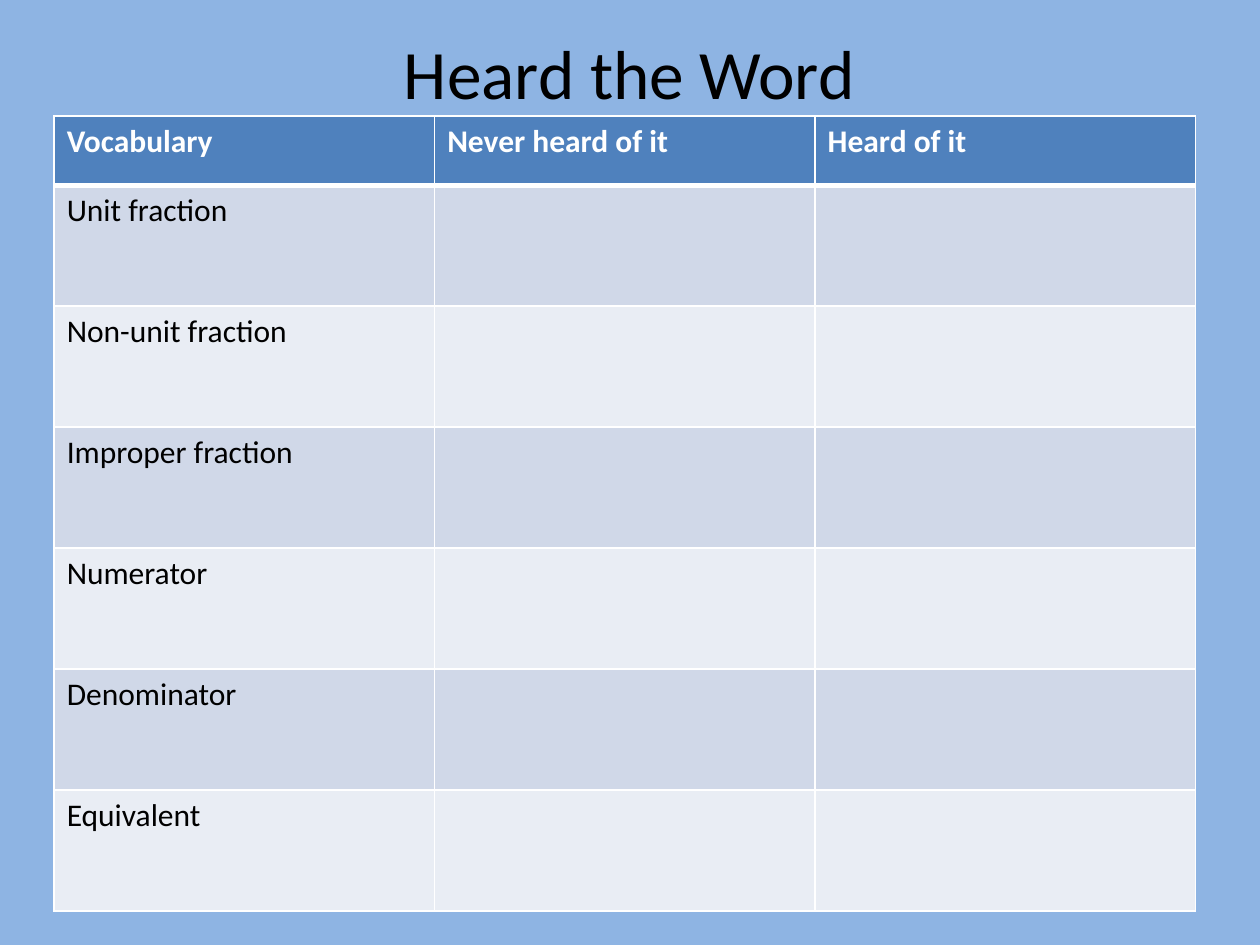
"""Build the "Heard the Word" fraction vocabulary slide."""
from dataclasses import dataclass

from lxml.etree import SubElement
from pptx import Presentation
from pptx.dml.color import RGBColor
from pptx.enum.text import MSO_ANCHOR, PP_ALIGN
from pptx.oxml.ns import qn
from pptx.util import Inches, Pt


@dataclass(frozen=True)
class Theme:
    font: str = "Calibri"
    background: str = "8EB4E3"
    header: str = "4F81BD"
    bands: tuple = ("D0D8E8", "E9EDF4")
    border: str = "FFFFFF"
    header_text: str = "FFFFFF"
    text: str = "000000"
    title_size: float = 39.6
    body_size: float = 18
    thin: float = 1
    thick: float = 3


def add_text(paragraph, text, size, color, bold=False):
    run = paragraph.add_run()
    run.text = text
    run.font.name = theme.font
    run.font.size = Pt(size)
    run.font.bold = bold
    run.font.color.rgb = RGBColor.from_string(color)


def add_borders(cell, widths):
    properties = cell._tc.get_or_add_tcPr()
    for side, width in widths.items():
        line = SubElement(properties, qn(f"a:ln{side}"), w=str(Pt(width)))
        fill = SubElement(line, qn("a:solidFill"))
        SubElement(fill, qn("a:srgbClr"), val=theme.border)


theme = Theme()
headings = ["Vocabulary", "Never heard of it", "Heard of it"]
words = ["Unit fraction", "Non-unit fraction", "Improper fraction",
         "Numerator", "Denominator", "Equivalent"]
entries = [headings] + [[word, "", ""] for word in words]

presentation = Presentation()
presentation.slide_width = Inches(10)
presentation.slide_height = Inches(7.5)
slide = presentation.slides.add_slide(presentation.slide_layouts[6])
slide.background.fill.solid()
slide.background.fill.fore_color.rgb = RGBColor.from_string(theme.background)

title = slide.shapes.add_textbox(Inches(0.5), Inches(0.3), Inches(8.99), Inches(0.54))
title.text_frame.word_wrap = True
title.text_frame.vertical_anchor = MSO_ANCHOR.MIDDLE
title_line = title.text_frame.paragraphs[0]
title_line.alignment = PP_ALIGN.CENTER
add_text(title_line, "Heard the Word", theme.title_size, theme.text)

vocabulary = slide.shapes.add_table(
    len(entries), len(headings), Inches(0.43), Inches(0.92), Inches(9.06), Inches(6.3)
).table
for column in vocabulary.columns:
    column.width = Inches(3.02)

for row_index, entry in enumerate(entries):
    is_header = row_index == 0
    vocabulary.rows[row_index].height = Inches(0.55 if is_header else 0.96)
    fill_color = theme.header if is_header else theme.bands[(row_index - 1) % 2]
    text_color = theme.header_text if is_header else theme.text
    widths = {
        "L": theme.thin,
        "R": theme.thin,
        "T": theme.thick if row_index == 1 else theme.thin,
        "B": theme.thick if is_header else theme.thin,
    }
    for column_index, text in enumerate(entry):
        cell = vocabulary.cell(row_index, column_index)
        add_borders(cell, widths)
        cell.fill.solid()
        cell.fill.fore_color.rgb = RGBColor.from_string(fill_color)
        if text:
            add_text(cell.text_frame.paragraphs[0], text, theme.body_size,
                     text_color, is_header)

presentation.save("out.pptx")
